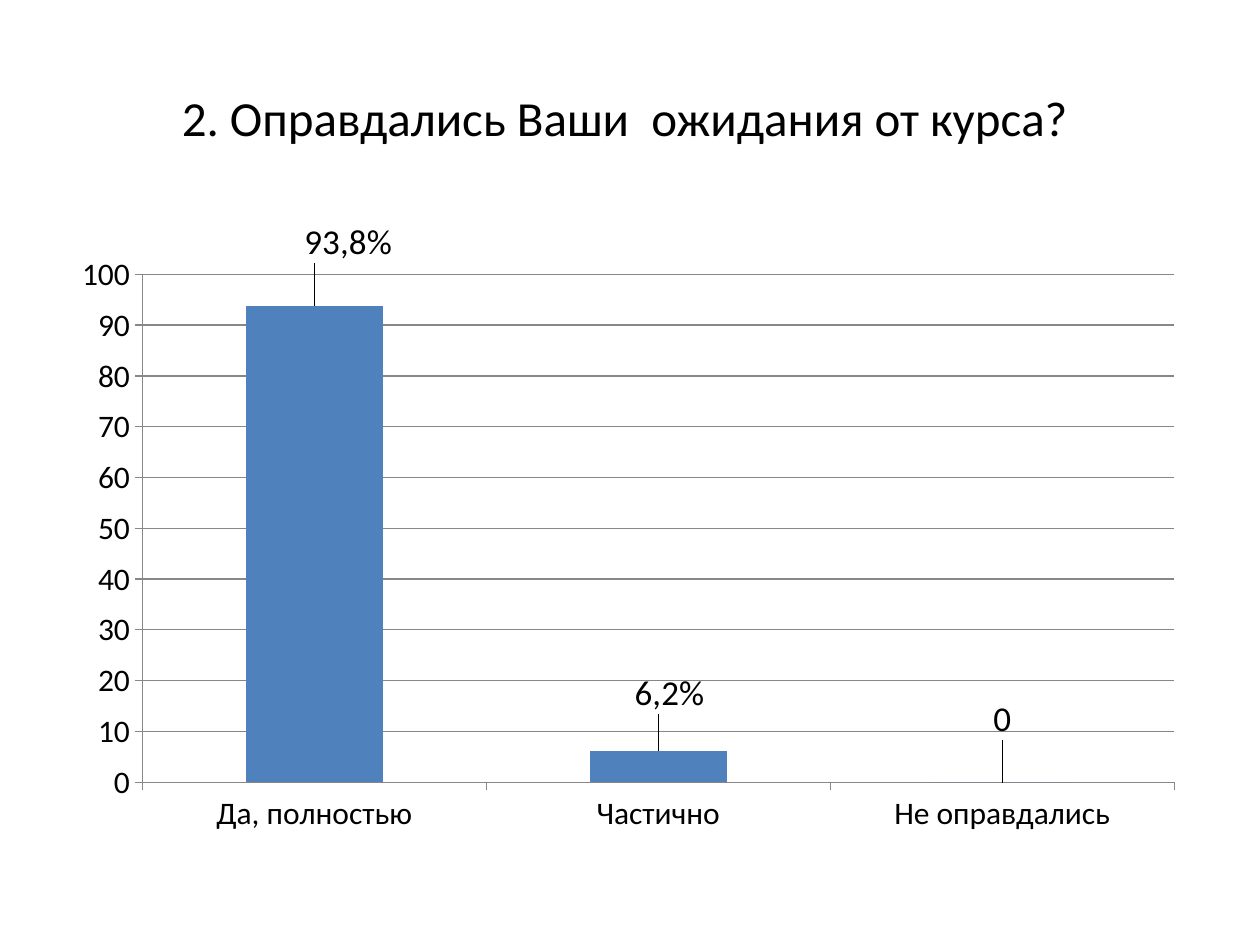
from lxml import etree
from pptx import Presentation
from pptx import util as u
from pptx.chart.data import CategoryChartData
from pptx.dml.color import RGBColor
from pptx.enum import chart as charts, text
from pptx.oxml import ns


def color(value):
    return RGBColor.from_string(value)


def add_layout(parent, index, **settings):
    for existing in parent.findall(ns.qn("c:layout")):
        parent.remove(existing)
    layout = etree.Element(ns.qn("c:layout"))
    manual = etree.SubElement(layout, ns.qn("c:manualLayout"))
    for name, value in settings.items():
        etree.SubElement(manual, ns.qn(f"c:{name}")).set("val", str(value))
    parent.insert(index, layout)


class SurveySlide:
    font_name = "Calibri"
    ink = "000000"
    bar = "4F81BD"
    grid = "878787"

    def __init__(self, presentation):
        self.slide = presentation.slides.add_slide(presentation.slide_layouts[5])

    def style_font(self, font, size):
        font.name = self.font_name
        font.size = u.Pt(size)
        font.color.rgb = color(self.ink)

    def add_title(self, wording, left, top, width, height):
        title = self.slide.shapes.title
        title.left, title.top = u.Cm(left), u.Cm(top)
        title.width, title.height = u.Cm(width), u.Cm(height)
        frame = title.text_frame
        frame.text = wording
        frame.vertical_anchor = text.MSO_ANCHOR.MIDDLE
        paragraph = frame.paragraphs[0]
        paragraph.alignment = text.PP_ALIGN.CENTER
        self.style_font(paragraph.runs[0].font, 28)

    def add_column_chart(self, answers, left, top, width, height):
        data = CategoryChartData()
        data.categories = [answer for answer, *_ in answers]
        data.add_series("Series 1", [share for _, share, *_ in answers])
        chart = self.slide.shapes.add_chart(
            charts.XL_CHART_TYPE.COLUMN_CLUSTERED,
            u.Cm(left), u.Cm(top), u.Cm(width), u.Cm(height), data,
        ).chart
        chart.has_legend = False
        chart.has_title = False
        self.style_font(chart.font, 18)
        self.style_axes(chart)

        plot = chart.plots[0]
        plot.gap_width = 150
        plot.vary_by_categories = False
        series = plot.series[0]
        series.format.fill.solid()
        series.format.fill.fore_color.rgb = color(self.bar)
        labels = series.data_labels
        labels.show_value = True
        self.style_font(labels.font, 20)
        for index, (_, _, caption, shift_x, shift_y) in enumerate(answers):
            self.add_label(series.points[index].data_label, caption, shift_x, shift_y)

        plot_area = chart.element.find(".//" + ns.qn("c:plotArea"))
        add_layout(plot_area, 0, layoutTarget="inner", xMode="edge", yMode="edge",
                   x=0.07, y=0.08, w=0.91, h=0.82)

    def style_axes(self, chart):
        value_axis = chart.value_axis
        value_axis.minimum_scale = 0
        value_axis.maximum_scale = 100
        value_axis.major_unit = 10
        value_axis.has_major_gridlines = True
        chart.category_axis.has_major_gridlines = False
        for axis in (value_axis, chart.category_axis):
            axis.major_tick_mark = charts.XL_TICK_MARK.OUTSIDE
            axis.minor_tick_mark = charts.XL_TICK_MARK.NONE
        for owner in (value_axis, chart.category_axis, value_axis.major_gridlines):
            owner.format.line.color.rgb = color(self.grid)
            owner.format.line.width = u.Pt(0.75)

    def add_label(self, label, caption, shift_x, shift_y):
        label.position = charts.XL_LABEL_POSITION.OUTSIDE_END
        if caption:
            label.text_frame.text = caption
            font = label.text_frame.paragraphs[0].runs[0].font
        else:
            font = label.font
        self.style_font(font, 20)
        element = label._dLbl
        add_layout(element, 1, x=shift_x, y=shift_y)


def main():
    presentation = Presentation()
    presentation.slide_width = u.Cm(25.4)
    presentation.slide_height = u.Cm(19.05)
    survey = SurveySlide(presentation)
    survey.add_title("2. Оправдались Ваши  ожидания от курса? ", 1.27, 0.76, 22.86, 3.18)
    answers = [
        ("Да, полностью", 93.8, "93,8%", 0.03, -0.06),
        ("Частично", 6.2, "6,2%", 0.01, -0.05),
        ("Не оправдались", 0, None, 0, -0.06),
    ]
    survey.add_column_chart(answers, 1.27, 4.45, 22.86, 12.57)
    presentation.save("out.pptx")


if __name__ == "__main__":
    main()
